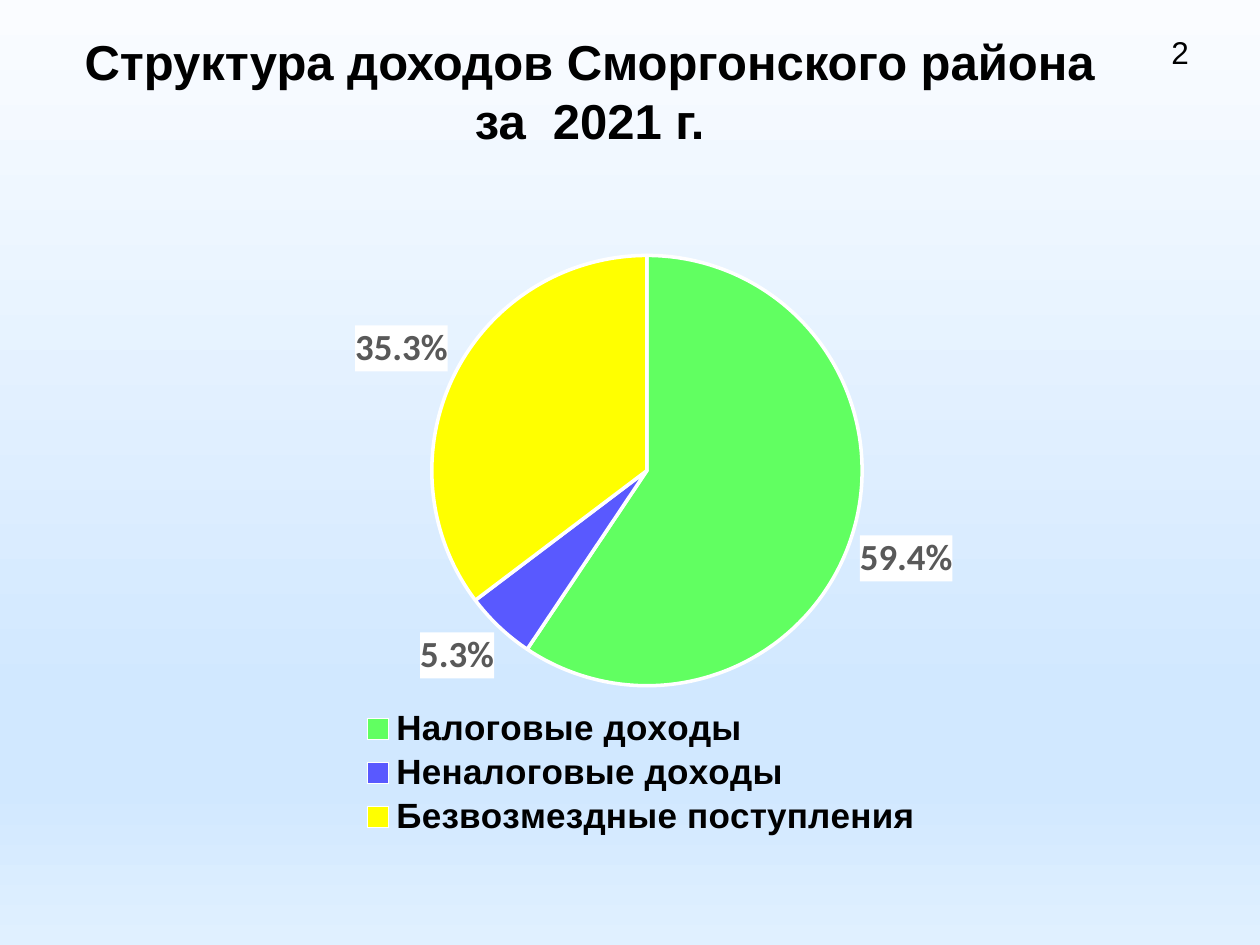
from lxml.etree import SubElement as Sub
from pptx import Presentation
from pptx.chart.data import CategoryChartData as Data
from pptx.dml.color import RGBColor as RGB
from pptx.enum.chart import XL_CHART_TYPE as Kind, XL_LABEL_POSITION as Spot
from pptx.enum.chart import XL_LEGEND_POSITION as Side
from pptx.enum.text import MSO_ANCHOR as Anchor, PP_ALIGN as Align
from pptx.oxml import parse_xml
from pptx.oxml.ns import nsdecls, qn
from pptx.util import Inches, Pt

HUES = {"text": "000000", "label": "595959", "edge": "FFFFFF",
        "tax": "61FF61", "other": "5959FF", "grant": "FFFF00"}
SKY = [(0, "FAFCFF"), (74, "D1E8FF"), (83, "D1E8FF"), (100, "E0F0FF")]
SHARES = [("Налоговые доходы", 0.594, "tax"),
          ("Неналоговые доходы", 0.053, "other"),
          ("Безвозмездные поступления", 0.353, "grant")]


def add_text(text, box, size, bold=False, anchor=Anchor.TOP):
    frame = slide.shapes.add_textbox(*map(Inches, box)).text_frame
    frame.word_wrap = True
    frame.vertical_anchor = anchor
    par = frame.paragraphs[0]
    par.alignment = Align.CENTER
    run = par.add_run()
    run.text = text
    style(run.font, size, bold=bold)


def style(font, size, name="Arial", hue="text", bold=False):
    font.size, font.name, font.bold = Pt(size), name, bold
    font.color.rgb = RGB.from_string(HUES[hue])


prs = Presentation()
prs.slide_width, prs.slide_height = Inches(10), Inches(7.5)
slide = prs.slides.add_slide(prs.slide_layouts[6])

# Background gradient, top to bottom
fill = slide.background.fill
fill.gradient()
fill.gradient_angle = 270
stops = next(slide.element.iter(qn("a:gsLst")))
for stop in list(stops):
    stops.remove(stop)
for pos, hue in SKY:
    stop = Sub(stops, qn("a:gs"), pos=str(pos * 1000))
    Sub(stop, qn("a:srgbClr"), val=hue)

# Title
add_text("Структура доходов Сморгонского района за  2021 г.",
         (0.5, 0.13, 8.36, 1.18), 28, bold=True, anchor=Anchor.MIDDLE)

# Pie of income shares
data = Data(number_format="0.0%")
data.categories = [name for name, _, _ in SHARES]
data.add_series("Доходы", [share for _, share, _ in SHARES])
box = map(Inches, (0.5, 1.78, 9, 4.95))
chart = slide.shapes.add_chart(Kind.PIE, *box, data).chart
chart.has_title = False
style(chart.font, 10, "Calibri")
plot = chart.plots[0]
plot.vary_by_categories = True
for i, (_, _, hue) in enumerate(SHARES):
    form = plot.series[0].points[i].format
    form.fill.solid()
    form.fill.fore_color.rgb = RGB.from_string(HUES[hue])
    form.line.color.rgb = RGB.from_string(HUES["edge"])
    form.line.width = Pt(2)

# Labels on white plates
labels = plot.series[0].data_labels
labels.show_value = True
labels.show_percentage = False
labels.position = Spot.OUTSIDE_END
labels.number_format = "0.0%"
labels.number_format_is_linked = False
style(labels.font, 21, "Calibri", "label", True)
plate = parse_xml(f'<c:spPr {nsdecls("c", "a")}><a:solidFill>'
                  f'<a:srgbClr val="{HUES["edge"]}"/></a:solidFill></c:spPr>')
next(chart.element.iter(qn("c:numFmt"))).addnext(plate)

# Legend
chart.has_legend = True
key = chart.legend
key.position = Side.BOTTOM
key.include_in_layout = False
style(key.font, 20, bold=True)

# Fixed places of pie and legend, as shares of the chart
area = next(chart.element.iter(qn("c:plotArea")))
legend = next(chart.element.iter(qn("c:legend")))
for part, at, spots in ((area, 0, (0.03, 0.05, 0.97, 0.69)),
                        (legend, 1, (0.25, 0.77, 0.52, 0.22))):
    for old in part.findall(qn("c:layout")):
        part.remove(old)
    layout = parse_xml(f'<c:layout {nsdecls("c")}/>')
    part.insert(at, layout)
    manual = Sub(layout, qn("c:manualLayout"))
    if part is area:
        Sub(manual, qn("c:layoutTarget"), val="inner")
    for tag in ("xMode", "yMode"):
        Sub(manual, qn(f"c:{tag}"), val="edge")
    for tag, val in zip("xywh", spots):
        Sub(manual, qn(f"c:{tag}"), val=str(val))

# Page number
add_text("2", (9.09, 0.21, 0.55, 0.4), 18)

prs.save("out.pptx")
